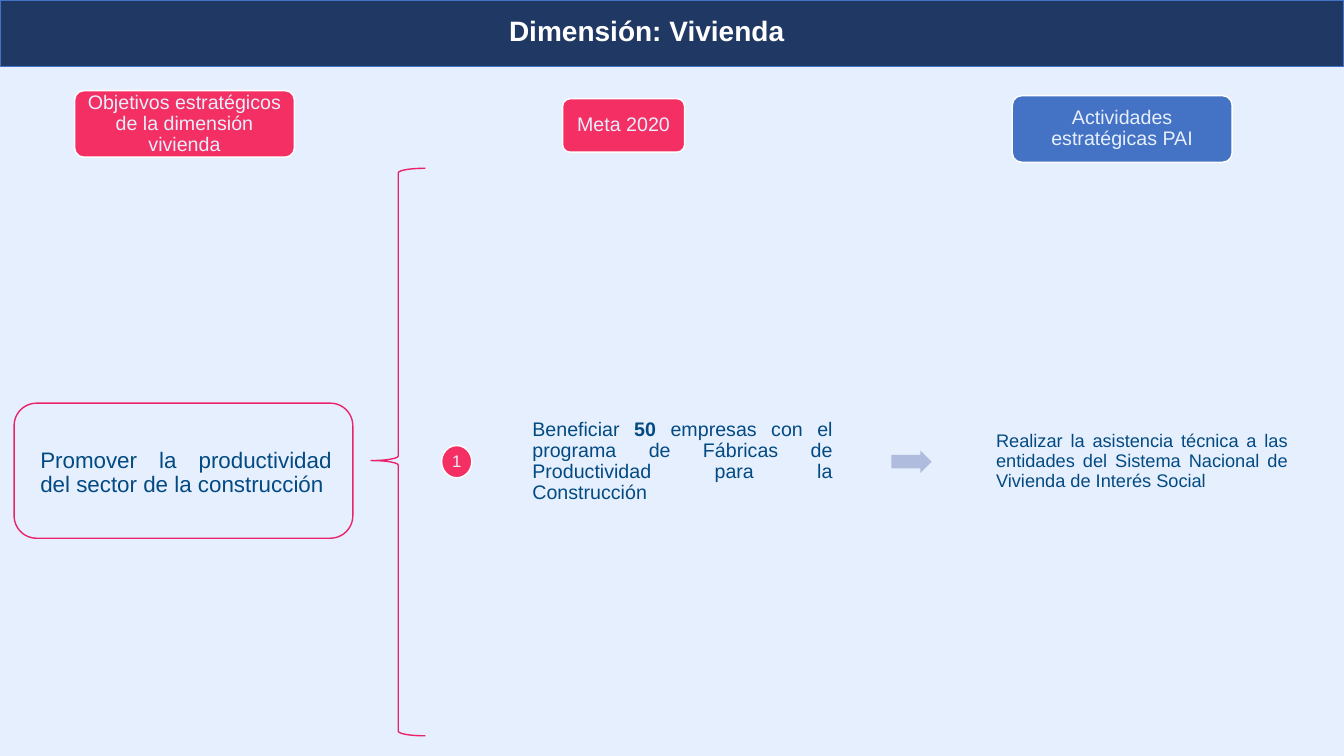
from dataclasses import dataclass

from pptx import Presentation
from pptx.dml.color import RGBColor
from pptx.enum.shapes import MSO_SHAPE
from pptx.enum.text import MSO_ANCHOR, MSO_AUTO_SIZE, PP_ALIGN
from pptx.util import Inches, Pt


@dataclass(frozen=True)
class Theme:
    font: str = "Arial"
    back: str = "E6EFFD"
    navy: str = "203864"
    blue: str = "4472C4"
    pink: str = "F42F63"
    edge: str = "EA246B"
    pale: str = "B0BCDE"
    ink: str = "034A83"
    white: str = "FFFFFF"
    title: int = 20
    lead: int = 16
    body: int = 14
    small: int = 13
    tiny: int = 12


THEME = Theme()


def write(shape, text, size, color, align=PP_ALIGN.CENTER, bold=None, inset=0.06):
    """Fill a shape with one paragraph; text between asterisks is bold."""
    frame = shape.text_frame
    frame.word_wrap = True
    frame.auto_size = MSO_AUTO_SIZE.NONE
    frame.vertical_anchor = MSO_ANCHOR.MIDDLE
    frame.margin_left = frame.margin_right = Inches(inset)
    frame.margin_top = frame.margin_bottom = Inches(inset)
    para = frame.paragraphs[0]
    para.alignment = align
    para.line_spacing = 0.9
    para.space_before = Pt(0)
    for i, part in enumerate(text.split("*")):
        run = para.add_run()
        run.text = part
        run.font.name = THEME.font
        run.font.size = Pt(size)
        run.font.bold = bold or i % 2 == 1
        run.font.color.rgb = RGBColor.from_string(color)


def draw(slide, kind, box, fill=None, line=None, adj=()):
    """Add a preset shape with flat fill and line."""
    shape = slide.shapes.add_shape(kind, *map(Inches, box))
    shape.shadow.inherit = False
    for i, value in enumerate(adj):
        shape.adjustments[i] = value
    if fill:
        shape.fill.solid()
        shape.fill.fore_color.rgb = RGBColor.from_string(fill)
    else:
        shape.fill.background()
    if line:
        shape.line.color.rgb = RGBColor.from_string(line)
        shape.line.width = Pt(1)
    else:
        shape.line.fill.background()
    return shape


def note(slide, box, text, size):
    """Add a justified text box."""
    label = slide.shapes.add_textbox(*map(Inches, box))
    write(label, text, size, THEME.ink, align=PP_ALIGN.JUSTIFY, inset=0.02)


def banner(slide, box):
    """Title on a dark bar."""
    left, top, _, _ = box
    draw(slide, MSO_SHAPE.RECTANGLE, box, THEME.navy, THEME.blue)
    title = slide.shapes.title
    title.left, title.top = Inches(left + 4.88), Inches(top + 0.14)
    title.width, title.height = Inches(3.07), Inches(0.36)
    write(title, "Dimensión: Vivienda", THEME.title, THEME.white, bold=True)
    # Bring the title in front of the bar
    title.element.getparent().append(title.element)


def heads(slide, box):
    """Column headings."""
    left, top, _, _ = box
    items = [
        (0.74, 0, 2.18, 0.66, THEME.pink, "Objetivos estratégicos de la dimensión vivienda"),
        (5.58, 0.08, 1.21, 0.53, THEME.pink, "Meta 2020"),
        (10.04, 0.05, 2.18, 0.66, THEME.blue, "Actividades estratégicas PAI"),
    ]
    for x, y, wide, high, fill, text in items:
        place = (left + x, top + y, wide, high)
        head = draw(slide, MSO_SHAPE.ROUNDED_RECTANGLE, place, fill, THEME.white, [0.14])
        write(head, text, THEME.body, THEME.back)


def goal(slide, box):
    """Objective in its frame, with the brace that opens its targets."""
    left, top, _, high = box
    draw(slide, MSO_SHAPE.ROUNDED_RECTANGLE, (left, top + 2.33, 3.36, 1.34), line=THEME.edge)
    note(slide, (left + 0.24, top + 2.72, 2.93, 0.61),
         "Promover la productividad del sector de la construcción", THEME.lead)
    draw(slide, MSO_SHAPE.LEFT_BRACE, (left + 3.54, top, 0.54, high),
         line=THEME.edge, adj=[0.083, 0.515])


def target(slide, box):
    """Numbered target, arrow and activity, centred on one line."""
    left, top, _, high = box

    def mid(x, wide, tall):
        return left + x, top + (high - tall) / 2, wide, tall

    dot = draw(slide, MSO_SHAPE.OVAL, mid(0, 0.3, 0.32), THEME.pink, THEME.white)
    write(dot, "1", THEME.tiny, THEME.back, inset=0)
    note(slide, mid(0.88, 3.02, 0.79),
         "Beneficiar* 50* empresas con el programa de Fábricas de Productividad "
         "para la Construcción", THEME.body)
    draw(slide, MSO_SHAPE.RIGHT_ARROW, mid(4.46, 0.4, 0.22), THEME.pale, adj=[0.6, 0.5])
    note(slide, mid(5.48, 2.93, 1.02),
         "Realizar la asistencia técnica a las entidades del Sistema Nacional "
         "de Vivienda de Interés Social", THEME.small)


def main():
    deck = Presentation()
    deck.slide_width, deck.slide_height = Inches(13.33), Inches(7.5)
    slide = deck.slides.add_slide(deck.slide_layouts[5])
    slide.background.fill.solid()
    slide.background.fill.fore_color.rgb = RGBColor.from_string(THEME.back)
    heads(slide, (0, 0.9, 13.33, 0.71))
    goal(slide, (0.14, 1.67, 4.08, 5.63))
    target(slide, (4.38, 4.07, 8.41, 1.02))
    banner(slide, (0, 0, 13.33, 0.66))
    deck.save("out.pptx")


if __name__ == "__main__":
    main()
